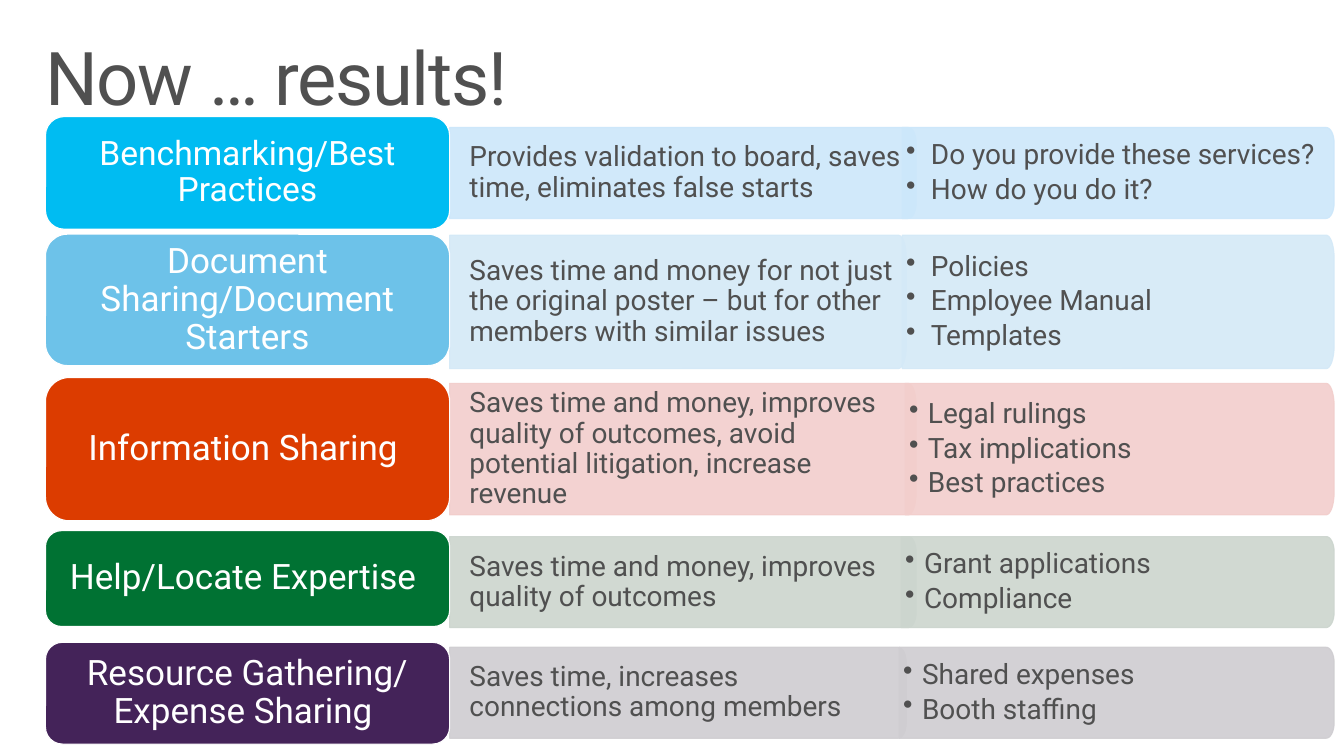
"""Build the results slide: five coloured topics, each with its benefit and examples."""
from math import cos, pi, sin

from lxml.etree import SubElement
from pptx import Presentation
from pptx.dml.color import RGBColor
from pptx.enum.shapes import MSO_SHAPE
from pptx.enum.text import MSO_ANCHOR, PP_ALIGN
from pptx.oxml.ns import qn
from pptx.util import Inches, Pt

COLORS = {
    "text": "505050", "white": "FFFFFF",
    "cyan": "00BCF2", "cyan tint": "CCE7FA",
    "sky": "6DC2E9", "sky tint": "D4E9F7",
    "red": "DC3C00", "red tint": "F2CECC",
    "green": "007233", "green tint": "CCD5CE",
    "purple": "442359", "purple tint": "CFCDD1",
}
LABEL_LEFT, LABEL_WIDTH = 0.46, 4.09
BENEFIT_LEFT = LABEL_LEFT + LABEL_WIDTH
EXAMPLES_RIGHT = 13.5
CORNER_SHARE, CORNER_WIDTH, CORNER_STEPS = 1 / 6, 0.08, 8

TOPICS = [
    dict(color="cyan", label="Benchmarking/Best Practices", size=24.5,
         label_span=(1.18, 1.14), panel_span=(1.29, 0.92),
         benefit="Provides validation to board, saves time, eliminates false starts",
         benefit_right=9.27, examples_left=9.13, indent=0.25,
         examples=["Do you provide these services?", "How do you do it?"]),
    dict(color="sky", label="Document Sharing/Document Starters", size=25.5,
         label_span=(2.37, 1.33), panel_span=(2.38, 1.35),
         benefit="Saves time and money for not just the original poster – "
                 "but for other members with similar issues",
         benefit_right=9.17, examples_left=9.13, indent=0.25,
         examples=["Policies", "Employee Manual", "Templates"]),
    dict(color="red", label="Information Sharing ", size=25.5,
         label_span=(3.82, 1.45), panel_span=(3.88, 1.33),
         benefit="Saves time and money, improves quality of outcomes, "
                 "avoid potential litigation, increase revenue",
         benefit_right=9.27, examples_left=9.16, indent=0.19,
         examples=["Legal rulings", "Tax implications", "Best practices"]),
    dict(color="green", label="Help/Locate Expertise ", size=25.5,
         label_span=(5.37, 0.97), panel_span=(5.43, 0.92),
         benefit="Saves time and money, improves quality of outcomes",
         benefit_right=9.27, examples_left=9.12, indent=0.19,
         examples=["Grant applications", "Compliance"]),
    dict(color="purple", label="Resource Gathering/ Expense Sharing ", size=25.5,
         label_span=(6.5, 1.03), panel_span=(6.55, 0.92),
         benefit="Saves time, increases connections among members",
         benefit_right=9.17, examples_left=9.1, indent=0.19,
         examples=["Shared expenses", "Booth staffing"]),
]


def write(shape, lines, size, color, margins, align=PP_ALIGN.LEFT, indent=0, after=0):
    frame = shape.text_frame
    frame.word_wrap = True
    frame.vertical_anchor = MSO_ANCHOR.MIDDLE
    frame.margin_left, frame.margin_right = Inches(margins[0]), Inches(margins[1])
    frame.margin_top = frame.margin_bottom = Inches(margins[2])
    frame.text = "\n".join(lines)
    for paragraph in frame.paragraphs:
        if indent:
            properties = paragraph._p.get_or_add_pPr()
            properties.set("marL", str(Inches(indent)))
            properties.set("indent", str(-Inches(indent)))
            SubElement(properties, qn("a:buChar")).set("char", "•")
        paragraph.alignment = align
        paragraph.line_spacing = 0.9
        paragraph.space_after = Pt(after)
        paragraph.font.name = "Roboto"
        paragraph.font.size = Pt(size)
        paragraph.font.color.rgb = RGBColor.from_string(COLORS[color])


def add_panel(page, left, right, span, color):
    top, height = span
    corner = height * CORNER_SHARE
    turns = [step * pi / 2 / CORNER_STEPS for step in range(CORNER_STEPS + 1)]
    upper = [(right - CORNER_WIDTH * (1 - sin(turn)), top + corner * (1 - cos(turn)))
             for turn in turns]
    lower = [(x, 2 * top + height - y) for x, y in reversed(upper)]
    points = [(Inches(x), Inches(y)) for x, y in upper + lower + [(left, top + height)]]
    outline = page.shapes.build_freeform(Inches(left), Inches(top))
    outline.add_line_segments(points, close=True)
    panel = outline.convert_to_shape()
    panel.shadow.inherit = False
    tint = RGBColor.from_string(COLORS[color])
    panel.fill.solid()
    panel.fill.fore_color.rgb = tint
    panel.line.color.rgb = tint
    panel.line.width = Pt(0.85)
    for paint in panel._element.spPr.iter(qn("a:srgbClr")):
        SubElement(paint, qn("a:alpha")).set("val", "90000")
    return panel


deck = Presentation()
deck.slide_width, deck.slide_height = Inches(13.6), Inches(7.65)
page = deck.slides.add_slide(deck.slide_layouts[6])

title = page.shapes.add_textbox(Inches(0.3), Inches(0.32), Inches(13), Inches(1))
write(title, ["Now … results!"], 54, "text", (0.16, 0.16, 0.1))
title.text_frame.paragraphs[0].runs[0]._r.get_or_add_rPr().set("spc", "-100")

for topic in TOPICS:
    tint = topic["color"] + " tint"
    benefit = add_panel(page, BENEFIT_LEFT, topic["benefit_right"], topic["panel_span"], tint)
    write(benefit, [topic["benefit"]], 20.4, "text", (0.2, 0.09, 0.07), after=3)

    top, height = topic["label_span"]
    label = page.shapes.add_shape(MSO_SHAPE.ROUNDED_RECTANGLE, Inches(LABEL_LEFT),
                                  Inches(top), Inches(LABEL_WIDTH), Inches(height))
    label.adjustments[0] = CORNER_SHARE
    label.shadow.inherit = False
    label.fill.solid()
    label.fill.fore_color.rgb = RGBColor.from_string(COLORS[topic["color"]])
    label.line.color.rgb = RGBColor.from_string(COLORS["white"])
    label.line.width = Pt(0.85)
    write(label, [topic["label"]], topic["size"], "white", (0.16, 0.16, 0.11),
          align=PP_ALIGN.CENTER)

    examples = add_panel(page, topic["examples_left"], EXAMPLES_RIGHT,
                         topic["panel_span"], tint)
    write(examples, topic["examples"], 20.4, "text", (0.04, 0.09, 0.07),
          indent=topic["indent"], after=3)

deck.save("out.pptx")
